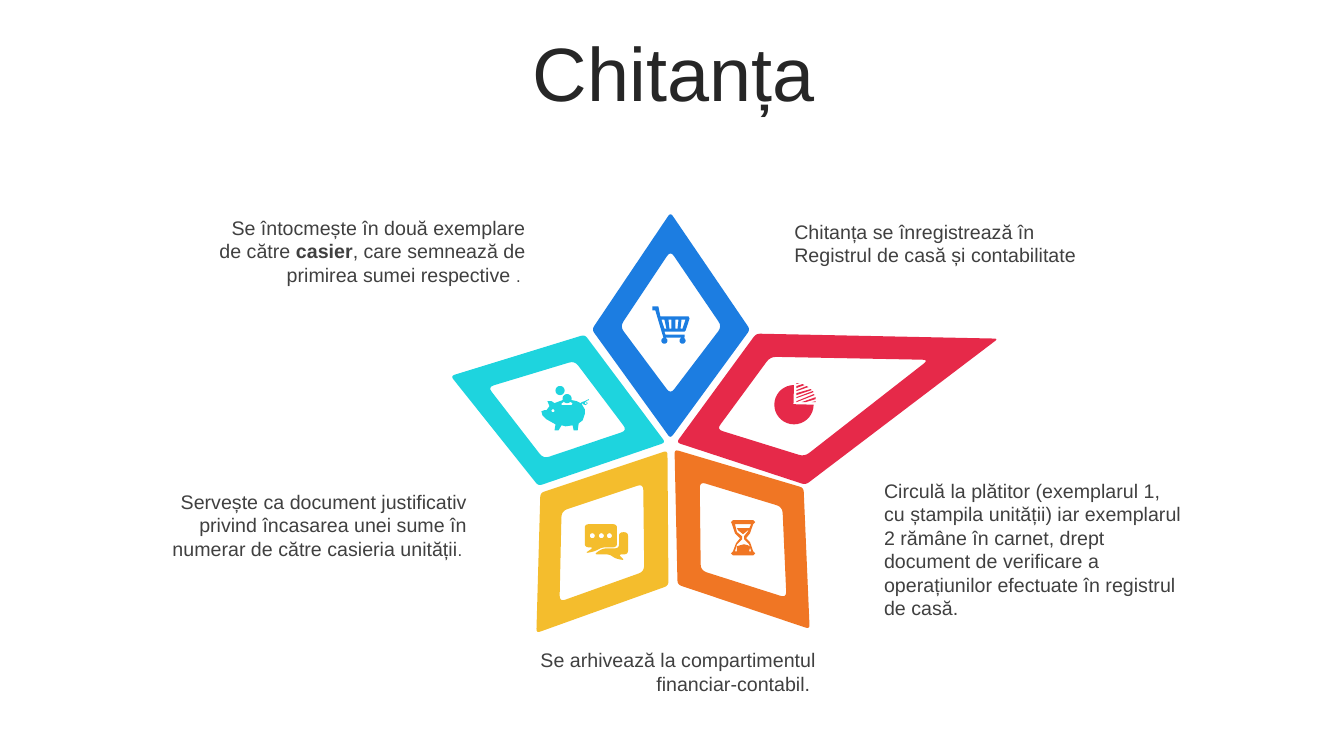
from dataclasses import dataclass
from math import cos, dist, radians, sin

from pptx import Presentation
from pptx.dml.color import RGBColor
from pptx.enum.text import MSO_ANCHOR as Anchor, MSO_AUTO_SIZE as AutoSize, PP_ALIGN as Align
from pptx.util import Pt

PX = 9144  # EMU in one px, a hundredth of an inch


@dataclass(frozen=True)
class Theme:
    font: str = "Arial"
    title_color: str = "262626"
    text_color: str = "404040"
    blue: str = "1C7DE1"
    red: str = "E62949"
    teal: str = "1ED4DE"
    yellow: str = "F4BD2D"
    orange: str = "F07624"
    title_size: int = 54
    text_size: int = 14
    small_size: int = 12


THEME = Theme()


def arc(left, top, diameter, sweep=360):
    """Points clockwise from three o'clock, in the circle of the given box."""
    radius = diameter / 2
    angles = [radians(degree) for degree in range(0, sweep + 1, 10)]
    return [(left + radius + radius * cos(a), top + radius + radius * sin(a)) for a in angles]


def rounded(corners, trim):
    """Polygon whose corners become short curves beginning trim px away."""
    points = []
    for i, (x, y) in enumerate(corners):
        ends = []
        for ex, ey in (corners[i - 1], corners[(i + 1) % len(corners)]):
            share = min(trim / dist((x, y), (ex, ey)), 0.5)
            ends.append((x + (ex - x) * share, y + (ey - y) * share))
        (ax, ay), (bx, by) = ends
        for t in (0, 0.25, 0.5, 0.75, 1):
            a, c, b = (1 - t) ** 2, 2 * t * (1 - t), t * t
            points.append((a * ax + c * x + b * bx, a * ay + c * y + b * by))
    return points


# Corners of the outer and inner edge, measured from the centre of the flower
PETALS = [
    (THEME.blue, [(0, -230), (79, -114), (0, -6), (-78, -114)],
     [(0, -192), (51, -117), (0, -50), (-50, -117)]),
    (THEME.red, [(85, -110), (325, -105), (134, 40), (6, -2)],
     [(99, -87), (256, -84), (133, 12), (46, -15)]),
    (THEME.teal, [(-85, -109), (-5, -2), (-131, 41), (-218, -68)],
     [(-95, -83), (-43, -14), (-126, 14), (-181, -57)]),
    (THEME.yellow, [(-129, 48), (-3, 6), (-2, 140), (-133, 187)],
     [(-108, 66), (-27, 39), (-26, 126), (-110, 156)]),
    (THEME.orange, [(4, 5), (132, 43), (138, 183), (7, 139)],
     [(29, 37), (111, 62), (115, 152), (30, 125)]),
]

PIGGY_BANK = [
    [(47, 13), (47, 14), (44, 15), (46, 17), (44, 19), (41, 18), (41, 16), (40, 18),
     (43, 23), (43, 28), (41, 34), (37, 37), (36, 44), (32, 44), (31, 39), (24, 40),
     (20, 39), (17, 44), (13, 44), (14, 38), (5, 33), (1, 29), (0, 25), (3, 24),
     (5, 24), (8, 20), (6, 15), (10, 15), (13, 17), (21, 14), (22, 16), (20, 17),
     (20, 19), (30, 19), (31, 17), (29, 16), (30, 14), (35, 15), (39, 17), (40, 16),
     (43, 15), (45, 14)],
    arc(10, 23, 3), arc(21, 8, 9), arc(14, 0, 9), arc(43, 16, 2),
]
PIE = [
    arc(0, 2, 39, 270) + [(19, 21)],
    [(41, 18), (41, 19), (37, 19)],
    [(41, 14), (41, 16), (31, 19), (27, 19)],
    [(39, 11), (40, 12), (22, 19), (22, 18)],
    [(38, 8), (39, 9), (22, 15), (22, 14)],
    [(36, 6), (37, 7), (22, 12), (22, 10)],
    [(32, 3), (34, 4), (22, 8), (22, 7)],
    [(28, 1), (30, 2), (22, 5), (22, 3)],
    [(22, 0), (25, 0), (22, 1)],
]
CHAT = [
    rounded([(0, 0), (32, 0), (32, 23), (17, 23), (10, 27), (0, 29), (9, 23), (0, 23)], 4),
    rounded([(34, 8), (43, 8), (43, 30), (33, 30), (40, 36), (30, 34), (25, 30),
             (9, 30), (18, 24), (34, 24)], 4),
    *[arc(left, 9, 5) for left in (5, 14, 22)],
]
HOURGLASS = [
    [(2, 0), (22, 0), (24, 2), (22, 4), (19, 13), (15, 18), (19, 22), (22, 31), (24, 33),
     (22, 35), (2, 35), (0, 33), (2, 31), (5, 23), (9, 18), (4, 13), (1, 4), (0, 2)],
    [(4, 4), (6, 12), (11, 16), (11, 19), (6, 24), (4, 31), (20, 31), (18, 24),
     (13, 19), (13, 16), (17, 11), (20, 4)],
    [(6, 8), (18, 8), (17, 10), (12, 14), (7, 10)],
    [(13, 24), (17, 25), (19, 27), (18, 31), (6, 31), (6, 26), (9, 25)],
]
CART = [
    [(6, 0), (8, 10), (36, 10), (37, 12), (33, 24), (32, 25), (12, 25), (13, 28),
     (32, 28), (32, 31), (11, 31), (3, 4), (0, 4), (0, 0)],
    [(29, 13), (28, 22), (30, 22), (33, 13)],
    [(23, 13), (23, 22), (25, 22), (26, 13)],
    [(16, 13), (17, 22), (19, 22), (19, 13)],
    [(9, 13), (12, 22), (14, 22), (12, 13)],
    arc(9, 31, 6), arc(27, 31, 6),
]
# Place of each icon, measured from the centre of the flower
ICONS = [
    (THEME.teal, -128, -58, PIGGY_BANK),
    (THEME.red, 103, -61, PIE),
    (THEME.yellow, -85, 79, CHAT),
    (THEME.orange, 60, 75, HOURGLASS),
    (THEME.blue, -18, -137, CART),
]

NOTES = [
    ((203, 209, 328, 81), Align.RIGHT, [
        ("Se întocmește în două exemplare de către ", THEME.text_size, False),
        ("casier", THEME.text_size, True),
        (", care semnează de primirea sumei respective ", THEME.text_size, False),
        (". ", THEME.small_size, False)]),
    ((501, 638, 318, 57), Align.RIGHT, [
        ("Se arhivează la compartimentul financiar-contabil. ", THEME.text_size, False)]),
    ((155, 481, 318, 81), Align.RIGHT, [
        ("Servește ca document justificativ privind încasarea unei sume în numerar "
         "de către casieria unității", THEME.text_size, False),
        (". ", THEME.small_size, False)]),
    ((778, 213, 337, 57), Align.LEFT, [
        ("Chitanța se înregistrează în Registrul de casă și contabilitate",
         THEME.text_size, False)]),
    ((867, 470, 318, 151), Align.LEFT, [
        ("Circulă la plătitor (exemplarul 1, cu ștampila unității) iar exemplarul 2 "
         "rămâne în carnet, drept document de verificare a operațiunilor efectuate "
         "în registrul de casă.", THEME.text_size, False)]),
]


def add_outline(slide, left, top, contours, color):
    """One filled shape; contours inside others are holes."""
    scaled = [[(x * PX, y * PX) for x, y in contour] for contour in contours]
    builder = slide.shapes.build_freeform(*scaled[0][0])
    for number, contour in enumerate(scaled):
        if number:
            builder.move_to(*contour[0])
        builder.add_line_segments(contour[1:], close=True)
    shape = builder.convert_to_shape(left * PX, top * PX)
    shape.shadow.inherit = False
    shape.fill.solid()
    shape.fill.fore_color.rgb = RGBColor.from_string(color)
    shape.line.fill.background()


def add_text(slide, box, align, pieces, color):
    frame = slide.shapes.add_textbox(*(length * PX for length in box)).text_frame
    frame.word_wrap = True
    para = frame.paragraphs[0]
    para.alignment = align
    for text, size, bold in pieces:
        span = para.add_run()
        span.text = text
        span.font.name = THEME.font
        span.font.size = Pt(size)
        span.font.bold = bold
        span.font.color.rgb = RGBColor.from_string(color)
    return frame


def add_title(slide, box, text):
    frame = add_text(slide, box, Align.CENTER, [(text, THEME.title_size, False)],
                     THEME.title_color)
    frame.vertical_anchor = Anchor.MIDDLE
    frame.paragraphs[0].line_spacing = 0.9
    frame.paragraphs[0].space_before = Pt(10)


def add_flower(slide, center_x, center_y):
    for color, outer, inner in PETALS:
        add_outline(slide, center_x, center_y, [rounded(outer, 4), rounded(inner, 6)], color)
    for color, dx, dy, contours in ICONS:
        add_outline(slide, center_x + dx, center_y + dy, contours, color)


def main():
    deck = Presentation()
    deck.slide_width, deck.slide_height = 1333 * PX, 750 * PX
    slide = deck.slides.add_slide(deck.slide_layouts[6])
    add_title(slide, (35, 37, 1266, 79), "Chitanța")
    add_flower(slide, 665, 441)
    for box, align, pieces in NOTES:
        frame = add_text(slide, box, align, pieces, THEME.text_color)
        frame.auto_size = AutoSize.SHAPE_TO_FIT_TEXT
    deck.save("out.pptx")


if __name__ == "__main__":
    main()
